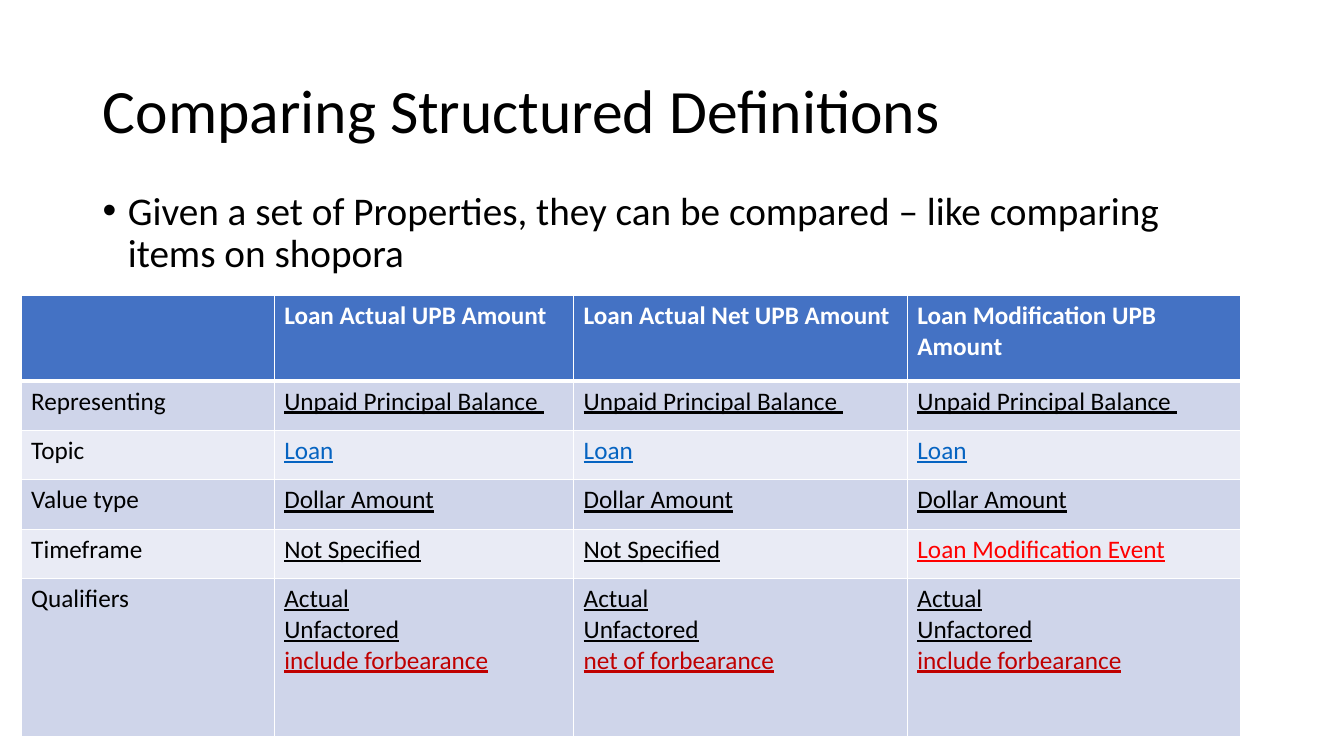
from lxml import etree
from pptx import Presentation, util as u
from pptx.dml.color import RGBColor
from pptx.enum import text
from pptx.oxml.ns import qn

BLACK = RGBColor(0x00, 0x00, 0x00)
WHITE = RGBColor(0xFF, 0xFF, 0xFF)
HEADER = RGBColor(0x44, 0x72, 0xC4)
BANDS = [RGBColor(0xE9, 0xEB, 0xF5), RGBColor(0xCF, 0xD5, 0xEA)]
LINK = RGBColor(0x05, 0x63, 0xC1)
RED = RGBColor(0xFF, 0x00, 0x00)
DARK_RED = RGBColor(0xC0, 0x00, 0x00)

COLS = [2.51, 2.97, 3.31, 3.31]
ROWS = [0.85] + [0.49] * 4 + [1.57]
CELLS = [
    ["", "Loan Actual UPB Amount", "Loan Actual Net UPB Amount", "Loan Modification UPB Amount"],
    ["Representing"] + ["Unpaid Principal Balance "] * 3,
    ["Topic"] + ["Loan"] * 3,
    ["Value type"] + ["Dollar Amount"] * 3,
    ["Timeframe", "Not Specified", "Not Specified", "Loan Modification Event"],
    ["Qualifiers"] + [f"Actual\nUnfactored\n{kind} forbearance"
                      for kind in ("include", "net of", "include")],
]
# Words that differ in colour from the black body text
COLOURS = {"Loan": LINK, "Loan Modification Event": RED,
           "include forbearance": DARK_RED, "net of forbearance": DARK_RED}


def write(p, words, color, **fmt):
    r = p.add_run()
    r.text = words
    r.font.color.rgb = color
    for name, value in {"name": "Calibri", **fmt}.items():
        setattr(r.font, name, value)


def add_border(tcPr, side, width):
    ln = etree.SubElement(tcPr, qn(f"a:{side}"), w=str(u.Pt(width)))
    fill = etree.SubElement(ln, qn("a:solidFill"))
    etree.SubElement(fill, qn("a:srgbClr"), val=str(WHITE))


prs = Presentation()
prs.slide_width, prs.slide_height = u.Inches(13.33), u.Inches(7.5)
s = prs.slides.add_slide(prs.slide_layouts[5])
left, width = u.Inches(0.92), u.Inches(11.5)

# Title
title = s.shapes.title
title.left, title.top, title.width, title.height = left, u.Inches(0.4), width, u.Inches(1.45)
tf = title.text_frame
tf.auto_size = text.MSO_AUTO_SIZE.NONE
tf.vertical_anchor = text.MSO_ANCHOR.MIDDLE
p = tf.paragraphs[0]
p.alignment, p.line_spacing = text.PP_ALIGN.LEFT, 0.9
write(p, "Comparing Structured Definitions", BLACK, size=u.Pt(44))

# Bullet
tf = s.shapes.add_textbox(left, u.Inches(1.85), width, u.Inches(1.08)).text_frame
tf.word_wrap = True
p = tf.paragraphs[0]
p.line_spacing, p.space_before = 0.9, u.Pt(10)
write(p, "Given a set of Properties, they can be compared – like comparing items on shopora",
      BLACK, size=u.Pt(28))
pPr = p._p.get_or_add_pPr()
indent = u.Inches(0.25)
pPr.set("marL", str(indent))
pPr.set("indent", str(-indent))
etree.SubElement(pPr, qn("a:buFont"), typeface="Arial")
etree.SubElement(pPr, qn("a:buChar"), char="•")

# Comparison table
table = s.shapes.add_table(len(ROWS), len(COLS), u.Inches(0.21), u.Inches(2.93),
                           u.Inches(sum(COLS)), u.Inches(sum(ROWS))).table
for col, w in zip(table.columns, COLS):
    col.width = u.Inches(w)
for row, h in zip(table.rows, ROWS):
    row.height = u.Inches(h)

for i, row in enumerate(CELLS):
    for j, content in enumerate(row):
        cell = table.cell(i, j)
        tcPr = cell._tc.get_or_add_tcPr()
        for side in ("lnL", "lnR", "lnT", "lnB"):
            thick = (i, side) in ((0, "lnB"), (1, "lnT"))
            add_border(tcPr, side, 3 if thick else 1)
        cell.fill.solid()
        cell.fill.fore_color.rgb = BANDS[i % 2] if i else HEADER
        for k, line in enumerate(content.split("\n") if content else []):
            p = cell.text_frame.add_paragraph() if k else cell.text_frame.paragraphs[0]
            write(p, line, COLOURS.get(line, BLACK) if i else WHITE,
                  size=u.Pt(18), bold=i == 0, underline=i > 0 and j > 0)

prs.save("out.pptx")
